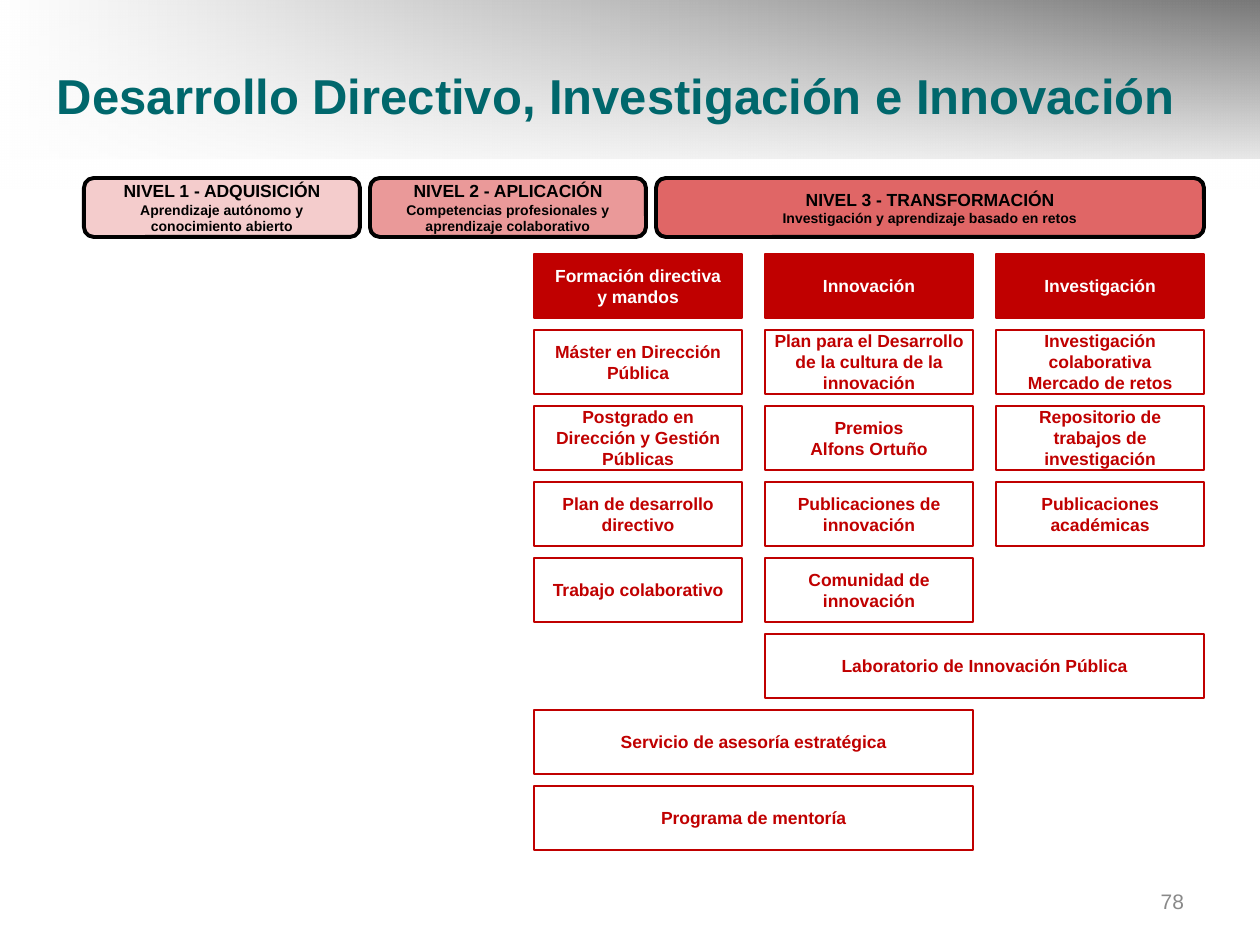
from dataclasses import dataclass

from lxml.etree import SubElement
from pptx import Presentation
from pptx.dml.color import RGBColor
from pptx.enum.shapes import MSO_SHAPE as Shape
from pptx.enum.text import MSO_ANCHOR as Anchor, PP_ALIGN as Align
from pptx.oxml.ns import qn
from pptx.util import Pt

PX = 914400 // 126  # EMU per pixel


@dataclass(frozen=True)
class Theme:
    font: str = "Arial"
    title: str = "00676C"
    number: str = "898989"
    red: str = "C00000"
    white: str = "FFFFFF"
    black: str = "000000"
    levels: tuple = ("F4CCCC", "EA9999", "E06666")
    title_size: int = 28
    number_size: int = 12
    text_size: int = 10
    detail_size: int = 8


THEME = Theme()

# Level bar: width, heading, detail
LEVELS = [
    (276, "NIVEL 1 - ADQUISICIÓN", "Aprendizaje autónomo y conocimiento abierto"),
    (276, "NIVEL 2 - APLICACIÓN", "Competencias profesionales y aprendizaje colaborativo"),
    (548, "NIVEL 3 - TRANSFORMACIÓN", "Investigación y aprendizaje basado en retos"),
]
LEVEL_LEFT, LEVEL_TOP, LEVEL_HEIGHT, LEVEL_GAP = 84, 178, 59, 10

# Each column reads downwards; the first entry is its heading
COLUMNS = [
    ["Formación directiva\ny mandos", "Máster en Dirección Pública",
     "Postgrado en Dirección y Gestión Públicas", "Plan de desarrollo directivo",
     "Trabajo colaborativo"],
    ["Innovación", "Plan para el Desarrollo de la cultura de la innovación",
     "Premios\nAlfons Ortuño", "Publicaciones de innovación", "Comunidad de innovación"],
    ["Investigación", "Investigación colaborativa\nMercado de retos",
     "Repositorio de trabajos de investigación", "Publicaciones académicas"],
]
# Boxes across two columns: column, row, text
WIDE_BOXES = [
    (1, 5, "Laboratorio de Innovación Pública"),
    (0, 6, "Servicio de asesoría estratégica"),
    (0, 7, "Programa de mentoría"),
]
GRID_LEFT, GRID_TOP, COLUMN_PITCH, ROW_PITCH = 534, 254, 231, 76
BOX_WIDTH, BOX_HEIGHT = 208, 64
TIGHT_CELL = (1, 1)  # the longest text needs narrow side margins


def color(value):
    return RGBColor.from_string(value)


def emu(*lengths):
    return [length * PX for length in lengths]


def write(shape, text, sizes, text_color, align=Align.CENTER, bold=True, margins=(13, 0)):
    """Fill a shape with text; sizes holds one type size per paragraph, the last repeats."""
    frame = shape.text_frame
    frame.word_wrap = True
    frame.vertical_anchor = Anchor.MIDDLE
    side, edge = emu(*margins)
    frame.margin_left = frame.margin_right = side
    frame.margin_top = frame.margin_bottom = edge
    frame.text = text
    for index, paragraph in enumerate(frame.paragraphs):
        paragraph.alignment = align
        for run in paragraph.runs:
            run.font.name = THEME.font
            run.font.size = Pt(sizes[min(index, len(sizes) - 1)])
            run.font.bold = bold
            run.font.color.rgb = color(text_color)


def add_box(slide, kind, place, fill, line, line_width):
    shape = slide.shapes.add_shape(kind, *emu(*place))
    shape.shadow.inherit = False
    shape.fill.solid()
    shape.fill.fore_color.rgb = color(fill)
    shape.line.color.rgb = color(line)
    shape.line.width = Pt(line_width)
    return shape


def add_gradient(slide, place, colors, angle, first_alpha=100):
    shape = slide.shapes.add_shape(Shape.RECTANGLE, *emu(*place))
    shape.shadow.inherit = False
    shape.line.fill.background()
    shape.fill.gradient()
    shape.fill.gradient_angle = angle
    for position, (stop, value) in enumerate(zip(shape.fill.gradient_stops, colors)):
        stop.position = position
        stop.color.rgb = color(value)
    if first_alpha < 100:
        first = shape._element.spPr.find(".//" + qn("a:srgbClr"))
        SubElement(first, qn("a:alpha")).set("val", str(first_alpha * 1000))


def add_label(slide, place, text, size, text_color, align, bold):
    label = slide.shapes.add_textbox(*emu(*place))
    write(label, text, [size], text_color, align, bold, (13, 6))


def add_levels(slide):
    left = LEVEL_LEFT
    for (width, heading, detail), fill in zip(LEVELS, THEME.levels):
        place = (left, LEVEL_TOP, width, LEVEL_HEIGHT)
        bar = add_box(slide, Shape.ROUNDED_RECTANGLE, place, fill, THEME.black, 2.25)
        write(bar, f"{heading}\n{detail}", [THEME.text_size, THEME.detail_size],
              THEME.black, margins=(13, 13))
        left += width + LEVEL_GAP


def add_cell(slide, column, row, text, span=1):
    place = (GRID_LEFT + column * COLUMN_PITCH, GRID_TOP + row * ROW_PITCH,
             BOX_WIDTH + (span - 1) * COLUMN_PITCH, BOX_HEIGHT)
    fill, text_color = (THEME.white, THEME.red) if row else (THEME.red, THEME.white)
    cell = add_box(slide, Shape.RECTANGLE, place, fill, THEME.red, 1.5)
    side = 5 if (column, row) == TIGHT_CELL else 13
    write(cell, text, [THEME.text_size], text_color, margins=(side, 0))


def main():
    presentation = Presentation()
    presentation.slide_width, presentation.slide_height = emu(1260, 945)
    slide = presentation.slides.add_slide(presentation.slide_layouts[6])

    # Header shading: dark to the right, fading to white downwards
    add_gradient(slide, (0, 0, 1260, 159), (THEME.white, THEME.black), 0)
    add_gradient(slide, (0, 0, 1260, 189), (THEME.white, THEME.white), 270, 47)

    # Title and page number
    add_label(slide, (44, 55, 1153, 79), "Desarrollo Directivo, Investigación e Innovación",
              THEME.title_size, THEME.title, Align.LEFT, True)
    add_label(slide, (903, 876, 294, 50), "78",
              THEME.number_size, THEME.number, Align.RIGHT, False)

    # Levels and programme grid
    add_levels(slide)
    for column, texts in enumerate(COLUMNS):
        for row, text in enumerate(texts):
            add_cell(slide, column, row, text)
    for column, row, text in WIDE_BOXES:
        add_cell(slide, column, row, text, span=2)

    presentation.save("out.pptx")


if __name__ == "__main__":
    main()
